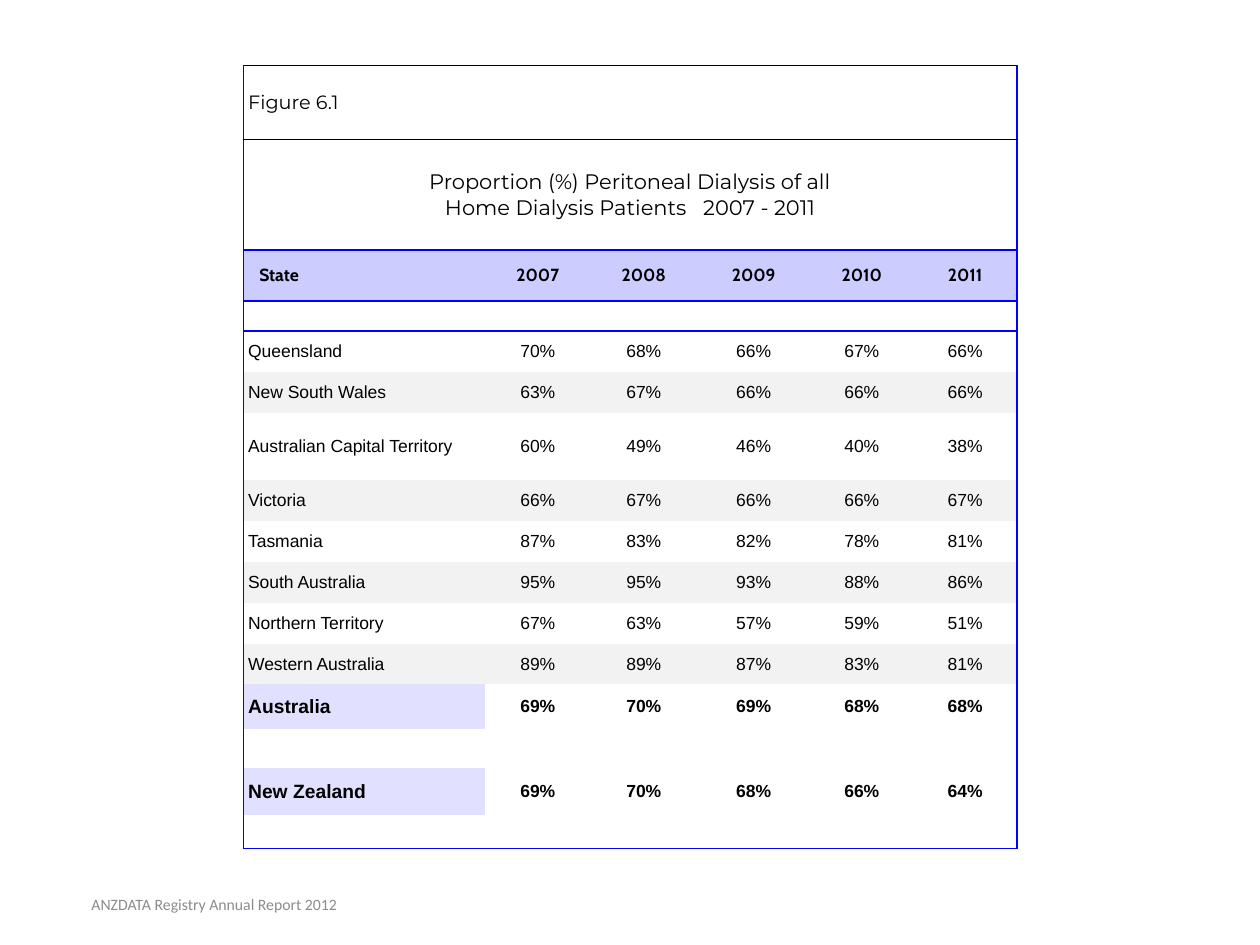
import pptx
import pptx.util
import pptx.dml.color
import pptx.enum.text
import pptx.oxml
import pptx.oxml.ns
import lxml.etree

Pt = pptx.util.Pt
ALIGN = pptx.enum.text.PP_ALIGN
MIDDLE = pptx.enum.text.MSO_ANCHOR.MIDDLE
qn = pptx.oxml.ns.qn

BLUE = "0000FF"
BLACK = "000000"
BAND = "F2F2F2"
NO_STYLE = "{2D5ABB26-0587-4C30-8999-92F81FD0307C}"

COLUMN_WIDTHS = [138.3, 60, 61.2, 64.4, 59.2, 59]
CAPTION_HEIGHTS = [42.2, 63.2, 29.1]
YEARS = ["2007", "2008", "2009", "2010", "2011"]
STATES = [
    (17.1, None, []),
    (23.4, "Queensland", [70, 68, 66, 67, 66]),
    (23.4, "New South Wales", [63, 67, 66, 66, 66]),
    (38.4, "Australian Capital Territory", [60, 49, 46, 40, 38]),
    (23.4, "Victoria", [66, 67, 66, 66, 67]),
    (23.4, "Tasmania", [87, 83, 82, 78, 81]),
    (23.4, "South Australia", [95, 95, 93, 88, 86]),
    (23.4, "Northern Territory", [67, 63, 57, 59, 51]),
    (23.4, "Western Australia", [89, 89, 87, 83, 81]),
    (25.7, "Australia", [69, 70, 69, 68, 68]),
    (22.3, None, []),
    (26.9, "New Zealand", [69, 70, 68, 66, 64]),
    (18.9, None, []),
]
COUNTRIES = ("Australia", "New Zealand")


def rgb(value):
    return pptx.dml.color.RGBColor.from_string(value)


def write(paragraph, text, size=10, font="Arial", color=BLACK, bold=False,
          align=ALIGN.LEFT, after=None, tracking=0):
    paragraph.alignment = align
    if after is not None:
        paragraph.space_after = Pt(after)
    run = paragraph.add_run()
    run.text = text
    run.font.size = Pt(size)
    run.font.name = font
    run.font.bold = bold
    run.font.color.rgb = rgb(color)
    if tracking:
        run._r.get_or_add_rPr().set("spc", str(round(tracking * 100)))


def draw_borders(cell, edges):
    properties = cell._tc.get_or_add_tcPr()
    for side in "LRTB":
        if side not in edges:
            continue
        color, width = edges[side]
        line = lxml.etree.SubElement(properties, qn(f"a:ln{side}"), w=str(Pt(width)))
        solid = lxml.etree.SubElement(line, qn("a:solidFill"))
        lxml.etree.SubElement(solid, qn("a:srgbClr"), val=color)


def format_cell(cell, edges, fill=None):
    cell.margin_left = cell.margin_right = Pt(2.8)
    cell.margin_top = cell.margin_bottom = Pt(1.4)
    cell.vertical_anchor = MIDDLE
    draw_borders(cell, edges)
    if fill:
        cell.fill.solid()
        cell.fill.fore_color.rgb = rgb(fill)
    else:
        cell.fill.background()


def format_row(table, row, fills, top=None, bottom=None):
    last = len(COLUMN_WIDTHS) - 1
    for column, fill in enumerate(fills):
        edges = {"L": (BLUE, 1) if column == 0 else None,
                 "R": (BLUE, 1) if column == last else None,
                 "T": top, "B": bottom}
        format_cell(table.cell(row, column),
                    {side: edge for side, edge in edges.items() if edge}, fill)


def fill_caption(table):
    last = len(COLUMN_WIDTHS) - 1
    thin = (BLACK, 0.5)
    format_row(table, 0, [None] * 6, top=thin, bottom=thin)
    format_row(table, 1, [None] * 6, top=thin, bottom=(BLUE, 1))
    for row in (0, 1):
        table.cell(row, 0).merge(table.cell(row, last))
        draw = {"R": (BLUE, 1)}
        origin = table.cell(row, 0)
        properties = origin._tc.get_or_add_tcPr()
        draw_borders(origin, draw)
        properties.insert(1, properties.find(qn("a:lnR")))

    write(table.cell(0, 0).text_frame.paragraphs[0], "Figure 6.1",
          size=11, font="Montserrat")
    title = table.cell(1, 0).text_frame
    style = dict(size=12, font="Montserrat", align=ALIGN.CENTER)
    write(title.paragraphs[0], "Proportion (%) Peritoneal Dialysis of all", **style)
    period = title.add_paragraph()
    write(period, "Home Dialysis Patients", **style)
    write(period, " ", tracking=6.3, **style)
    write(period, "2007 - 2011", **style)


def fill_header(table, row):
    format_row(table, row, ["CCCCFF"] * 6, top=(BLUE, 1), bottom=(BLUE, 1))
    for column, label in enumerate(["State"] + YEARS):
        write(table.cell(row, column).text_frame.paragraphs[0], label, font="Cabin",
              bold=True, align=ALIGN.CENTER if column else ALIGN.LEFT)
    table.cell(row, 0).margin_left = Pt(9.2)


def fill_states(table, first_row):
    for index, (_, state, shares) in enumerate(STATES):
        row = first_row + index
        country = state in COUNTRIES
        if country:
            fills = ["E1E1FF"] + [None] * 5
        else:
            fills = [BAND if state and index % 2 == 0 else None] * 6
        format_row(table, row, fills,
                   top=(BLUE, 1) if index == 0 else None,
                   bottom=(BLUE, 1) if index == len(STATES) - 1 else None)
        if state is None:
            for cell in table.rows[row].cells:
                paragraph = cell.text_frame.paragraphs[0]
                lxml.etree.SubElement(paragraph._p, qn("a:endParaRPr"), sz="1000")
            continue
        write(table.cell(row, 0).text_frame.paragraphs[0], state,
              size=11 if country else 10, bold=country, after=14)
        for column, share in enumerate(shares, start=1):
            write(table.cell(row, column).text_frame.paragraphs[0], f"{share}%",
                  bold=country, align=ALIGN.CENTER, after=14)


def add_dialysis_table(slide, left, top):
    heights = CAPTION_HEIGHTS + [state[0] for state in STATES]
    frame = slide.shapes.add_table(len(heights), len(COLUMN_WIDTHS), Pt(left), Pt(top),
                                   Pt(sum(COLUMN_WIDTHS)), Pt(sum(heights)))
    table = frame.table
    table.first_row = table.horz_banding = False
    table._tbl.tblPr.find(qn("a:tableStyleId")).text = NO_STYLE
    for column, width in zip(table.columns, COLUMN_WIDTHS):
        column.width = Pt(width)
    for row, height in zip(table.rows, heights):
        row.height = Pt(height)
    fill_caption(table)
    fill_header(table, 2)
    fill_states(table, 3)


def add_footer(slide, left, top, width, height):
    footer = slide.shapes.add_textbox(Pt(left), Pt(top), Pt(width), Pt(height)).text_frame
    footer.word_wrap = True
    footer.vertical_anchor = MIDDLE
    write(footer.paragraphs[0], "ANZDATA Registry Annual Report 2012", size=9,
          font="Calibri", color="8C8C8C", align=ALIGN.CENTER)


def main():
    deck = pptx.Presentation()
    deck.slide_width, deck.slide_height = Pt(720), Pt(540)
    slide = deck.slides.add_slide(deck.slide_layouts[6])
    add_dialysis_table(slide, 139, 37.5)
    add_footer(slide, 14.4, 502.5, 216, 28.8)
    deck.save("out.pptx")


if __name__ == "__main__":
    main()
